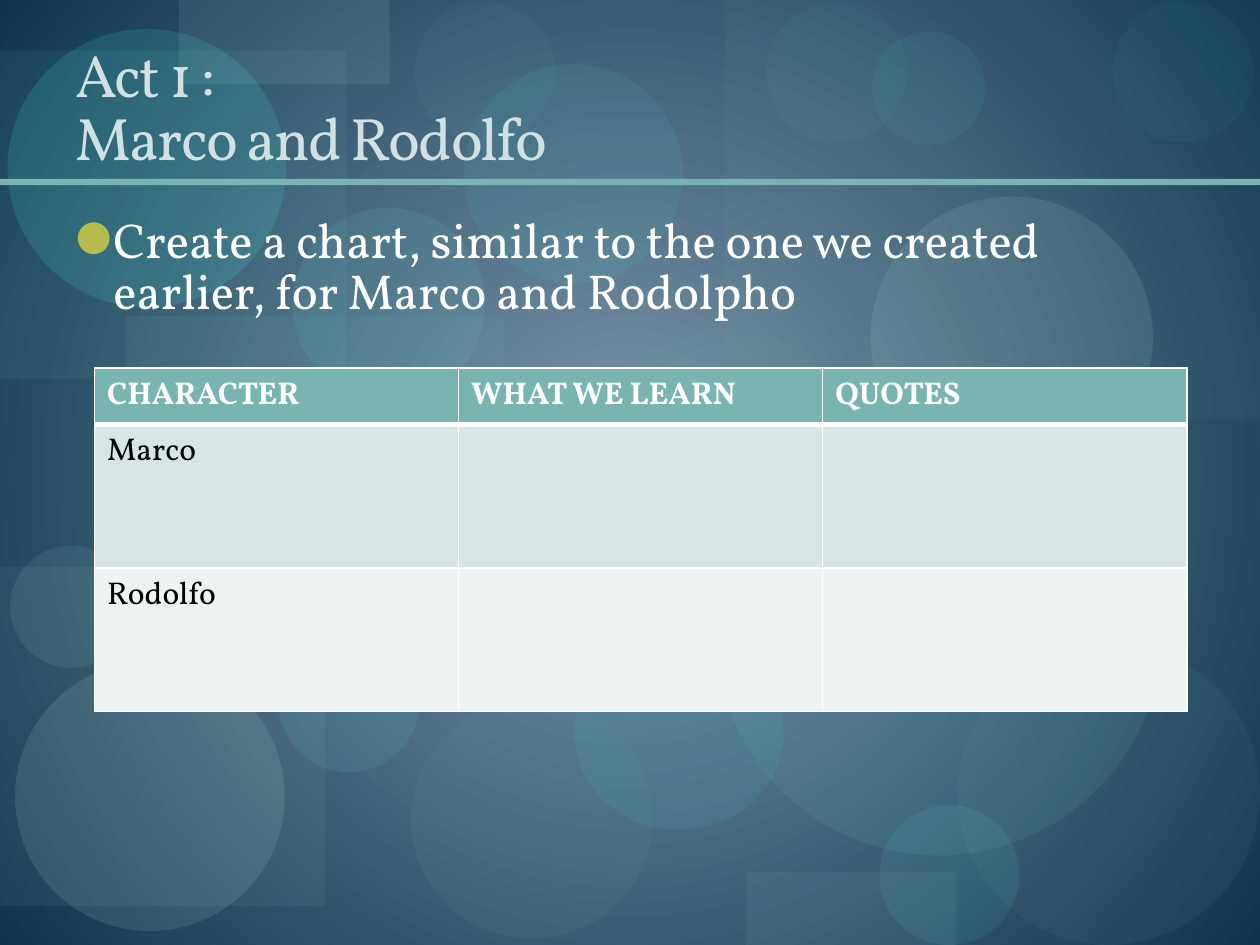
from lxml import etree
from pptx import Presentation
from pptx.dml.color import RGBColor
from pptx.enum import shapes, text
from pptx.oxml import parse_xml
from pptx.oxml.ns import nsdecls, qn
from pptx.util import Inches, Pt

FONT = "Vollkorn"
COLORS = {
    "glow": "7B96AA", "edge": "0E354D", "teal": "79B5B0", "title": "D1E1E3",
    "white": "FFFFFF", "black": "000000", "bullet": "B4BC4C",
    "odd_row": "D7E5E4", "even_row": "ECF3F2",
}
TITLE = "Act 1 :\vMarco and Rodolfo"
TASK = "Create a chart, similar to the one we created earlier, for Marco and Rodolpho"
ROWS = [
    ["CHARACTER", "WHAT WE LEARN", "QUOTES"],
    ["Marco", "", ""],
    ["Rodolfo", "", ""],
]
ROW_FILLS = ["teal", "odd_row", "even_row"]
ROW_HEIGHTS = [0.42, 1.14, 1.14]
COLUMN_WIDTH = 2.89

# Back to front: outline, left, top, width, height, colour, opacity in percent
BOX, DISC = shapes.MSO_SHAPE.RECTANGLE, shapes.MSO_SHAPE.OVAL
BACKDROP = [
    (BOX, 1, 2.51, 3, 2.33, "79B5B0", 9),
    (DISC, 3.26, 5.55, 1.92, 1.9, "549791", 13),
    (BOX, 5.75, 0, 4.25, 3.33, "79B5B0", 6),
    (BOX, 0, 4.5, 2.58, 2.69, "B2B7BA", 8),
    (DISC, 4.57, 2.61, 2.38, 2.38, "70A39E", 8),
    (DISC, 6.98, 6.39, 1.11, 1.11, "65E8DC", 9),
    (DISC, 6.91, 1.56, 2.24, 2.24, "C1E8E4", 11),
    (DISC, 0.12, 5.25, 2.14, 2.14, "C1E8E4", 12),
    (DISC, 2.21, 5.01, 1.12, 1.12, "65E8DC", 9),
    (DISC, 4.56, 5.06, 1.66, 1.53, "44EADC", 8),
    (BOX, 0, 0.4, 2.75, 2.61, "77D6CE", 7),
    (BOX, 1.42, 0, 1.67, 0.67, "BED7D4", 10),
    (DISC, 0.06, 0.23, 2.21, 2.21, "44EADC", 15),
    (DISC, 0.08, 4.33, 0.97, 0.97, "97DCD6", 10),
    (DISC, 2.32, 1.65, 1.53, 1.53, "65E8DC", 9),
    (DISC, 3.68, 0.51, 1.74, 1.74, "44EADC", 8),
    (DISC, 5.68, 3.25, 3.54, 3.54, "61CDC4", 10),
    (DISC, 6.08, 0.01, 1.12, 1.12, "65E8DC", 4),
    (DISC, 7.6, 5.1, 2.4, 2.4, "70A39E", 8),
    (DISC, 1.75, 4.05, 1.31, 1.31, "97DCD6", 10),
    (DISC, 6.92, 0.25, 0.9, 0.9, "65E8DC", 6),
    (DISC, 8.83, 0.01, 1.12, 1.12, "65E8DC", 4),
    (BOX, 5.92, 6.92, 1.67, 0.58, "79B5B0", 10),
    (DISC, 3.29, 0.01, 1.12, 1.12, "65E8DC", 4),
    (BOX, 0, 1.42, 10, 0.05, "79B5B0", 100),
]


def rgb(name):
    return RGBColor.from_string(COLORS[name])


def write(frame, words, size, color, bold=False, line_spacing=None, tracking=None):
    paragraph = frame.paragraphs[0]
    paragraph.text = words
    paragraph.alignment = text.PP_ALIGN.LEFT
    paragraph.line_spacing = line_spacing
    for run in paragraph.runs:
        font = run.font
        font.name, font.size, font.bold = FONT, Pt(size), bold
        font.color.rgb = rgb(color)
        if tracking:
            font._element.set("spc", str(tracking * 100))
    return paragraph


def paint_background(slide):
    stops = "".join(
        f'<a:gs pos="{pos}"><a:srgbClr val="{COLORS[name]}"/></a:gs>'
        for pos, name in [(0, "glow"), (100000, "edge")])
    slide.element.cSld.insert(0, parse_xml(
        f'<p:bg {nsdecls("p", "a")}><p:bgPr><a:gradFill rotWithShape="1">'
        f'<a:gsLst>{stops}</a:gsLst><a:path path="circle">'
        '<a:fillToRect l="50000" t="50000" r="50000" b="50000"/></a:path>'
        '</a:gradFill><a:effectLst/></p:bgPr></p:bg>'))


def add_backdrop(slide):
    """Add the translucent shapes behind the title and body."""
    for outline, left, top, width, height, color, opacity in BACKDROP:
        shape = slide.shapes.add_shape(
            outline, *map(Inches, (left, top, width, height)))
        shape.shadow.inherit = False
        shape.line.fill.background()
        shape.fill.solid()
        shape.fill.fore_color.rgb = RGBColor.from_string(color)
        if opacity < 100:
            tint = shape.element.spPr.find(".//" + qn("a:srgbClr"))
            etree.SubElement(tint, qn("a:alpha"), val=str(opacity * 1000))
        slide.shapes.title.element.addprevious(shape.element)


def place(holder, left, top, width, height, anchor):
    holder.left, holder.top = Inches(left), Inches(top)
    holder.width, holder.height = Inches(width), Inches(height)
    frame = holder.text_frame
    frame.word_wrap = True
    frame.auto_size = text.MSO_AUTO_SIZE.NONE
    frame.vertical_anchor = anchor
    return frame


def add_bullet(paragraph):
    indent = Inches(0.3)
    properties = paragraph._p.get_or_add_pPr()
    properties.set("marL", str(indent))
    properties.set("indent", str(-indent))
    color = etree.SubElement(properties, qn("a:buClr"))
    etree.SubElement(color, qn("a:srgbClr"), val=COLORS["bullet"])
    etree.SubElement(properties, qn("a:buSzPct"), val="85000")
    etree.SubElement(properties, qn("a:buFont"), typeface=FONT)
    etree.SubElement(properties, qn("a:buChar"), char="●")


def set_borders(cell, **widths):
    properties = cell._tc.get_or_add_tcPr()
    for index, (side, width) in enumerate(widths.items()):
        properties.insert(index, parse_xml(
            f'<a:{side} {nsdecls("a")} w="{Pt(width)}"><a:solidFill>'
            f'<a:srgbClr val="{COLORS["white"]}"/></a:solidFill></a:{side}>'))


def add_character_table(slide):
    columns = len(ROWS[0])
    table = slide.shapes.add_table(
        len(ROWS), columns, Inches(0.75), Inches(2.92),
        Inches(COLUMN_WIDTH * columns), Inches(sum(ROW_HEIGHTS))).table
    for column in table.columns:
        column.width = Inches(COLUMN_WIDTH)
    for r, entries in enumerate(ROWS):
        header = r == 0
        table.rows[r].height = Inches(ROW_HEIGHTS[r])
        for c, entry in enumerate(entries):
            cell = table.cell(r, c)
            cell.fill.solid()
            cell.fill.fore_color.rgb = rgb(ROW_FILLS[r])
            set_borders(cell, lnL=1, lnR=1, lnT=3 if r == 1 else 1,
                        lnB=3 if header else 1)
            if entry:
                write(cell.text_frame, entry, 18,
                      "white" if header else "black", bold=header)


def main():
    deck = Presentation()
    deck.slide_width, deck.slide_height = Inches(10), Inches(7.5)
    slide = deck.slides.add_slide(deck.slide_layouts[1])
    paint_background(slide)
    add_backdrop(slide)

    heading = place(slide.shapes.title, 0.5, 0.17, 9, 1.25, text.MSO_ANCHOR.BOTTOM)
    write(heading, TITLE, 34.2, "title", line_spacing=0.87, tracking=-1)

    body = place(slide.placeholders[1], 0.5, 1.67, 9, 5, text.MSO_ANCHOR.TOP)
    task = write(body, TASK, 28, "white", line_spacing=0.88)
    task.space_before = Pt(7)
    add_bullet(task)

    add_character_table(slide)
    deck.save("out.pptx")


if __name__ == "__main__":
    main()
